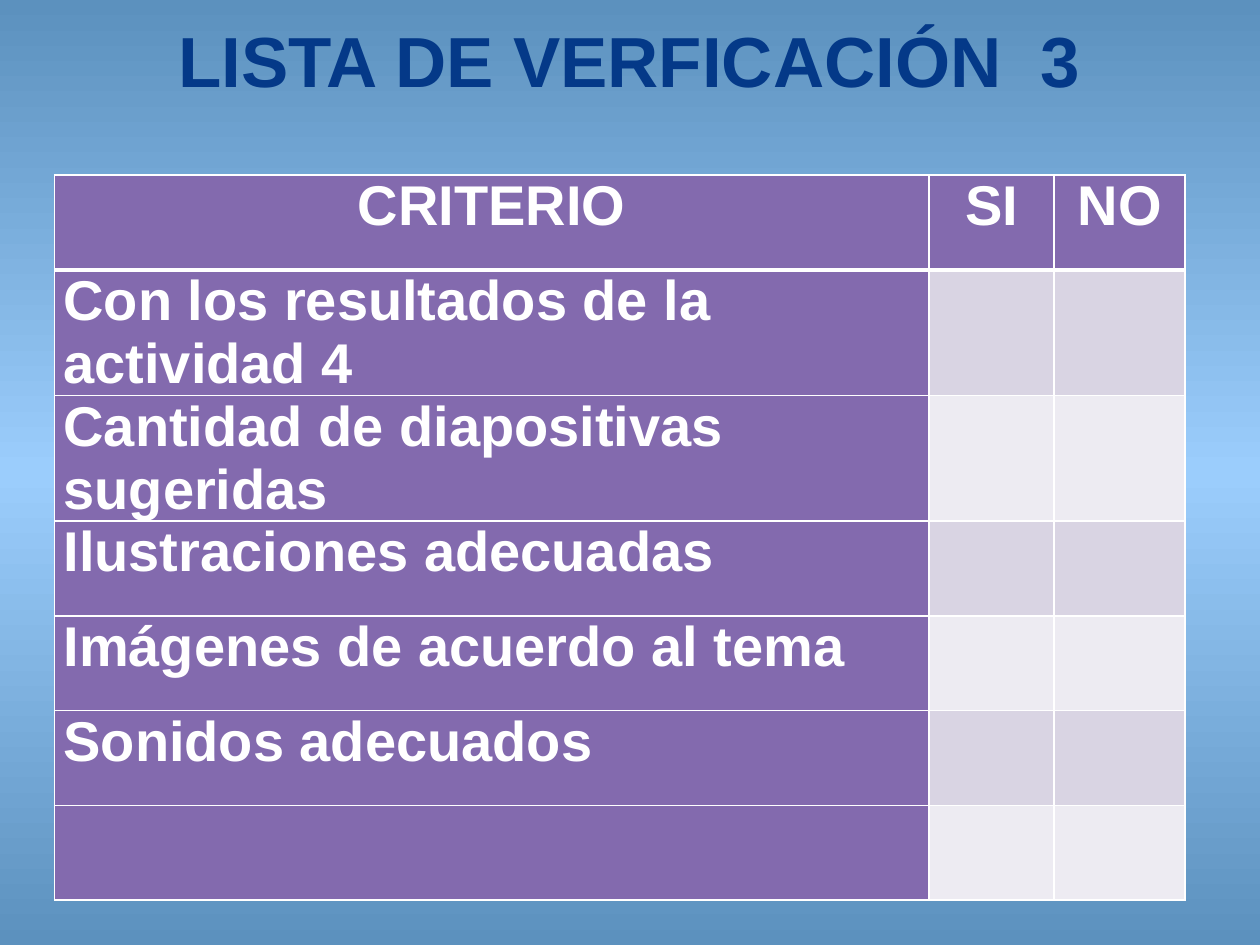
from copy import deepcopy

from lxml import etree
from pptx import Presentation
from pptx.dml.color import RGBColor
from pptx.enum.text import MSO_ANCHOR, PP_ALIGN
from pptx.oxml.ns import qn
from pptx.util import Cm, Pt

NAVY = RGBColor(0x04, 0x39, 0x88)
PURPLE = RGBColor(0x83, 0x6A, 0xAE)
LILAC = RGBColor(0xD9, 0xD4, 0xE3)
PALE_LILAC = RGBColor(0xED, 0xEB, 0xF2)
WHITE = RGBColor(0xFF, 0xFF, 0xFF)
EDGE_BLUE = RGBColor(0x5C, 0x91, 0xBE)
CENTER_BLUE = RGBColor(0x9B, 0xCD, 0xFC)


def format_text(paragraph, size, color, alignment):
    paragraph.alignment = alignment
    paragraph.font.name = "Arial"
    paragraph.font.size = Pt(size)
    paragraph.font.bold = True
    paragraph.font.color.rgb = color


def set_borders(cell, widths):
    properties = cell._tc.get_or_add_tcPr()
    for index, (side, width) in enumerate(widths.items()):
        line = etree.Element(qn(f"a:ln{side}"), w=str(Pt(width)))
        fill = etree.SubElement(line, qn("a:solidFill"))
        etree.SubElement(fill, qn("a:srgbClr"), val=str(WHITE))
        properties.insert(index, line)


presentation = Presentation()
presentation.slide_width = Cm(25.4)
presentation.slide_height = Cm(19.05)
slide = presentation.slides.add_slide(presentation.slide_layouts[5])

# Background: vertical gradient, lightest in the middle
background = slide.background.fill
background.gradient()
background.gradient_angle = 270
stop_list = next(slide._element.iter(qn("a:gsLst")))
stop_list.insert(1, deepcopy(stop_list[0]))
stops = zip(background.gradient_stops, (0, 0.5, 1), (EDGE_BLUE, CENTER_BLUE, EDGE_BLUE))
for stop, position, color in stops:
    stop.position = position
    stop.color.rgb = color

# Title
title = slide.shapes.title
title.left, title.top, title.width, title.height = Cm(1.27), Cm(0.33), Cm(22.86), Cm(3.2)
title.text_frame.text = "LISTA DE VERFICACIÓN  3"
title.text_frame.vertical_anchor = MSO_ANCHOR.TOP
title.text_frame.margin_top = 0
format_text(title.text_frame.paragraphs[0], 40.5, NAVY, PP_ALIGN.CENTER)

# Checklist table
rows = [
    ("CRITERIO", "SI", "NO"),
    ("Con los resultados de la actividad 4", "", ""),
    ("Cantidad de diapositivas sugeridas", "", ""),
    ("Ilustraciones adecuadas", "", ""),
    ("Imágenes de acuerdo al tema", "", ""),
    ("Sonidos adecuados", "", ""),
    ("", "", ""),
]
column_widths = [17.63, 2.52, 2.64]
row_heights = [1.91, 2.52, 2.52, 1.91, 1.91, 1.91, 1.91]
table = slide.shapes.add_table(
    len(rows), len(column_widths), Cm(1.1), Cm(3.53),
    Cm(sum(column_widths)), Cm(sum(row_heights))).table
table.first_col = True
for column, width in zip(table.columns, column_widths):
    column.width = Cm(width)

for row_index, (texts, height) in enumerate(zip(rows, row_heights)):
    table.rows[row_index].height = Cm(height)
    is_header = row_index == 0
    for column_index, text in enumerate(texts):
        cell = table.cell(row_index, column_index)
        cell.margin_left = cell.margin_right = Cm(0.18)
        cell.margin_top = cell.margin_bottom = 0
        cell.fill.solid()
        if is_header or column_index == 0:
            cell.fill.fore_color.rgb = PURPLE
        else:
            cell.fill.fore_color.rgb = LILAC if row_index % 2 else PALE_LILAC
        set_borders(cell, {"L": 1, "R": 1, "T": 3 if row_index == 1 else 1,
                           "B": 3 if is_header else 1})
        if text:
            cell.text = text
            format_text(cell.text_frame.paragraphs[0], 32, WHITE,
                        PP_ALIGN.CENTER if is_header else PP_ALIGN.LEFT)

presentation.save("out.pptx")
